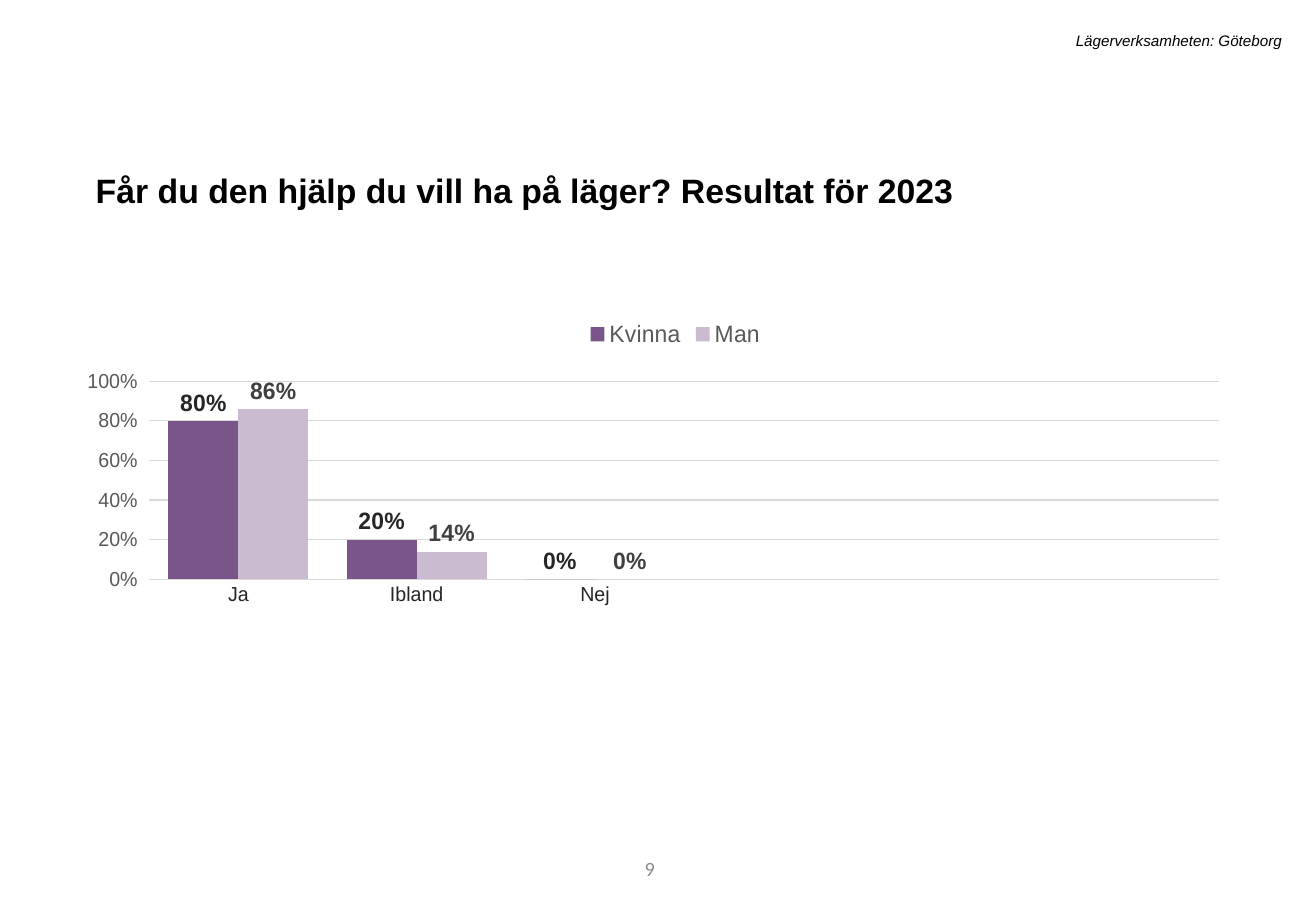
from dataclasses import dataclass

from lxml import etree
from pptx import Presentation
from pptx.chart.data import CategoryChartData
from pptx.dml.color import RGBColor
from pptx.enum.chart import XL_CHART_TYPE as ChartType
from pptx.enum.chart import XL_LABEL_POSITION as LabelPosition
from pptx.enum.chart import XL_LEGEND_POSITION as LegendPosition
from pptx.enum.chart import XL_TICK_MARK as TickMark
from pptx.enum.text import MSO_ANCHOR as Anchor
from pptx.enum.text import PP_ALIGN as Align
from pptx.oxml.ns import qn
from pptx.util import Pt

# Content
HEADER = "Lägerverksamheten: Göteborg"
TITLE = "Får du den hjälp du vill ha på läger? Resultat för 2023"
PAGE_NUMBER = "9"
ANSWERS = ["Ja", "Ibland", "Nej", "", "", ""]
SERIES = [  # name, shares, bar colour, label colour
    ("Kvinna", (0.8, 0.2, 0), "7A5589", "262626"),
    ("Man", (0.86, 0.14, 0), "CABBD0", "404040"),
]

# Places in points: left, top, width, height
SLIDE_SIZE = (780, 540)
HEADER_BOX = (128.9, 15.1, 637.9, 18)
TITLE_BOX = (49.7, 92.2, 676.8, 33.8)
NUMBER_BOX = (219.6, 500.4, 175.7, 28.8)
CHART_BOX = (51.8, 182.2, 676.8, 284.4)
PLOT = {"x": 0.025, "y": 0.154, "w": 0.966, "h": 0.413}  # shares of the chart


@dataclass(frozen=True)
class Theme:
    font: str = "Arial"
    number_font: str = "Calibri"
    black: str = "000000"
    dark: str = "262626"
    grey: str = "595959"
    number: str = "8C8C8C"
    grid: str = "D9D9D9"
    title_size: int = 20
    label_size: int = 14
    axis_size: int = 12
    chart_size: int = 10
    header_size: int = 9


THEME = Theme()


def style_font(font, size, color, name=THEME.font, bold=False, italic=False):
    font.name, font.size, font.bold, font.italic = name, Pt(size), bold, italic
    font.color.rgb = RGBColor.from_string(color)


def style_line(line):
    line.color.rgb = RGBColor.from_string(THEME.grid)
    line.width = Pt(0.75)


def add_text(slide, box, text, size, color, align=Align.LEFT, anchor=Anchor.TOP, **style):
    text_frame = slide.shapes.add_textbox(*map(Pt, box)).text_frame
    text_frame.word_wrap = True
    text_frame.vertical_anchor = anchor
    text_frame.text = text
    paragraph = text_frame.paragraphs[0]
    paragraph.alignment = align
    style_font(paragraph.runs[0].font, size, color, **style)
    return paragraph


def set_plot_area(chart):
    plot_area = chart.element.find(".//" + qn("c:plotArea"))
    layout = plot_area.find(qn("c:layout"))
    if layout is None:
        layout = etree.Element(qn("c:layout"))
        plot_area.insert(0, layout)
    manual = etree.SubElement(layout, qn("c:manualLayout"))
    settings = {"layoutTarget": "inner", "xMode": "edge", "yMode": "edge", **PLOT}
    for tag, value in settings.items():
        etree.SubElement(manual, qn(f"c:{tag}")).set("val", str(value))


def add_answer_chart(slide):
    data = CategoryChartData(number_format="0%")
    data.categories = ANSWERS
    for name, shares, _, _ in SERIES:
        data.add_series(name, shares)
    chart = slide.shapes.add_chart(
        ChartType.COLUMN_CLUSTERED, *map(Pt, CHART_BOX), data).chart
    style_font(chart.font, THEME.chart_size, THEME.black)
    chart.has_title = False
    set_plot_area(chart)

    # Legend
    chart.has_legend = True
    chart.legend.position = LegendPosition.TOP
    chart.legend.include_in_layout = False
    style_font(chart.legend.font, THEME.label_size, THEME.grey)

    # Axes
    answers, shares_axis = chart.category_axis, chart.value_axis
    answers.major_tick_mark = TickMark.NONE
    style_font(answers.tick_labels.font, THEME.axis_size, THEME.dark)
    style_line(answers.format.line)
    shares_axis.minimum_scale, shares_axis.maximum_scale = 0, 1
    shares_axis.major_unit = 0.2
    shares_axis.major_tick_mark = TickMark.OUTSIDE
    shares_axis.tick_labels.number_format = "0%"
    shares_axis.tick_labels.number_format_is_linked = False
    style_font(shares_axis.tick_labels.font, THEME.axis_size, THEME.grey)
    shares_axis.format.line.fill.background()
    style_line(shares_axis.major_gridlines.format.line)

    # Columns and their labels
    plot = chart.plots[0]
    plot.gap_width, plot.overlap = 55, 0
    plot.vary_by_categories = False
    for series, (_, _, bar_color, label_color) in zip(plot.series, SERIES):
        series.format.fill.solid()
        series.format.fill.fore_color.rgb = RGBColor.from_string(bar_color)
        labels = series.data_labels
        labels.show_value = True
        labels.position = LabelPosition.OUTSIDE_END
        labels.number_format = "0%"
        labels.number_format_is_linked = False
        style_font(labels.font, THEME.label_size, label_color, bold=True)


def main():
    presentation = Presentation()
    presentation.slide_width, presentation.slide_height = map(Pt, SLIDE_SIZE)
    slide = presentation.slides.add_slide(presentation.slide_layouts[6])

    add_text(slide, NUMBER_BOX, PAGE_NUMBER, THEME.axis_size, THEME.number,
             Align.RIGHT, Anchor.MIDDLE, name=THEME.number_font)
    add_answer_chart(slide)
    title = add_text(slide, TITLE_BOX, TITLE, THEME.title_size, THEME.black, bold=True)
    title.line_spacing = 1.2
    title.space_before = Pt(10)
    add_text(slide, HEADER_BOX, HEADER, THEME.header_size, THEME.black,
             Align.RIGHT, italic=True)

    presentation.save("out.pptx")


if __name__ == "__main__":
    main()
